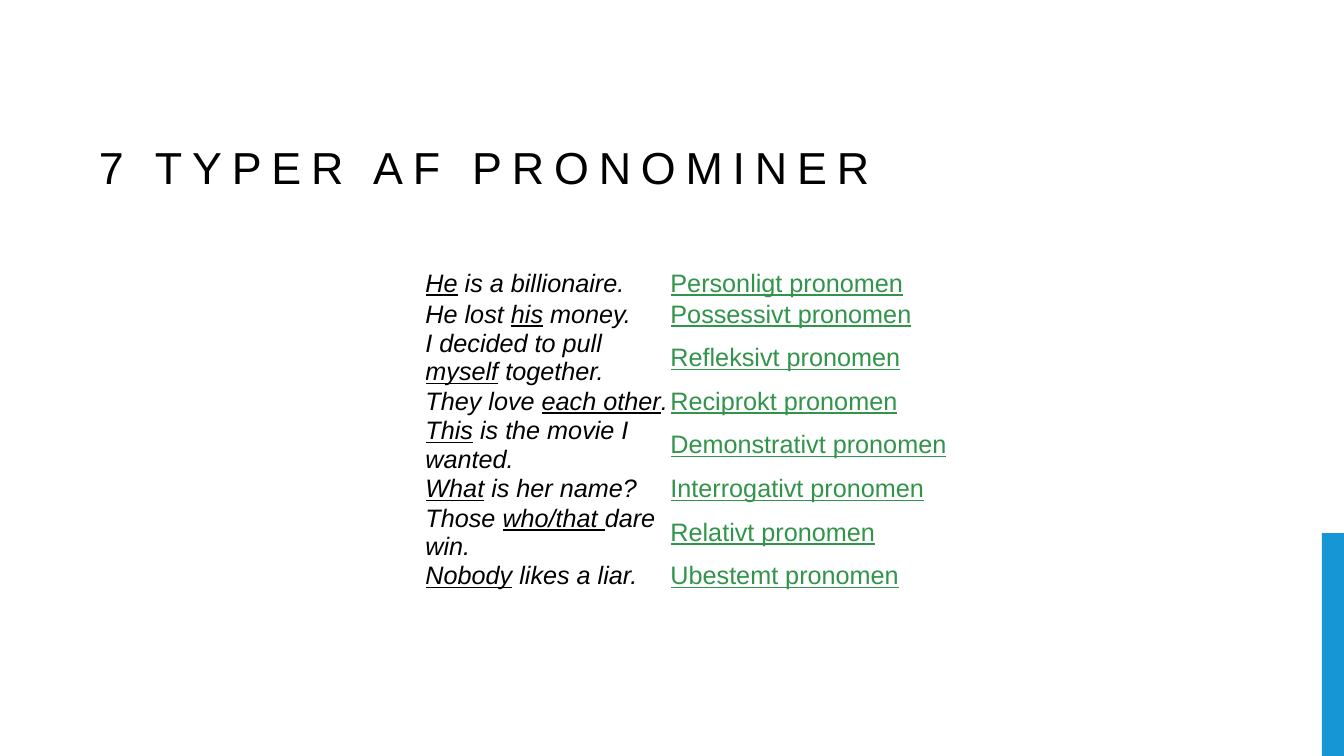
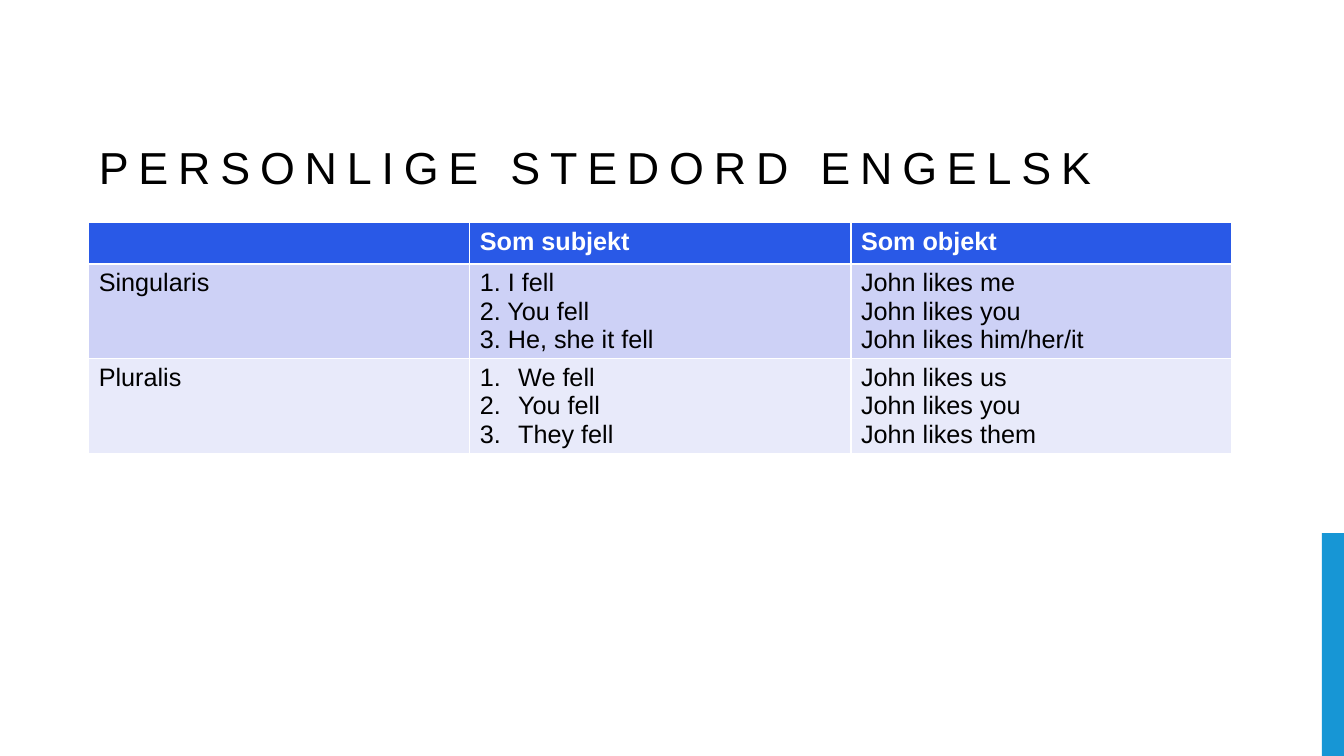
"""Build two slides on English pronouns, with Danish headings."""
import lxml.etree
import pptx
import pptx.dml.color
import pptx.enum.shapes
import pptx.enum.text
import pptx.oxml.ns
import pptx.util

Inches = pptx.util.Inches
RGBColor = pptx.dml.color.RGBColor
Anchor = pptx.enum.text.MSO_ANCHOR

BLACK = RGBColor(0x00, 0x00, 0x00)
WHITE = RGBColor(0xFF, 0xFF, 0xFF)
GREEN = RGBColor(0x31, 0x94, 0x4A)
BAND_BLUE = RGBColor(0x17, 0x96, 0xD5)
HEADER_BLUE = RGBColor(0x29, 0x59, 0xE7)
ROW_DARK = RGBColor(0xCD, 0xD1, 0xF6)
ROW_LIGHT = RGBColor(0xE8, 0xEA, 0xFA)

LINE_HEIGHT = 0.28

PRONOUN_TYPES = [
    (("", "He", " is a billionaire."), "Personligt pronomen", 1),
    (("He lost ", "his", " money."), "Possessivt pronomen", 1),
    (("I decided to pull ", "myself", " together."), "Refleksivt pronomen", 2),
    (("They love ", "each other", "."), "Reciprokt pronomen", 1),
    (("", "This", " is the movie I wanted."), "Demonstrativt pronomen", 2),
    (("", "What", " is her name?"), "Interrogativt pronomen", 1),
    (("Those ", "who/that ", "dare win."), "Relativt pronomen", 2),
    (("", "Nobody", " likes a liar."), "Ubestemt pronomen", 1),
]

PERSONAL_PRONOUNS = [
    ([], ["Som subjekt"], ["Som objekt"]),
    (["Singularis"], ["1. I fell", "2. You fell", "3. He, she it fell"],
     ["John likes me", "John likes you", "John likes him/her/it"]),
    (["Pluralis"], ["We fell", "You fell", "They fell"],
     ["John likes us", "John likes you", "John likes them"]),
]


class Deck:
    """Hold the shared style and the current slide."""

    font_name = "Arial"
    body_size = 18
    title_size = 32

    def __init__(self):
        self.presentation = pptx.Presentation()
        self.presentation.slide_width = Inches(13.33)
        self.presentation.slide_height = Inches(7.5)
        self.slide = None

    def add_slide(self, title):
        """Start a slide with its title and corner band."""
        self.slide = self.presentation.slides.add_slide(self.presentation.slide_layouts[5])
        self.add_band()
        self.set_title(title)

    def add_band(self):
        """Add the blue band at the lower right edge."""
        band = self.slide.shapes.add_shape(
            pptx.enum.shapes.MSO_SHAPE.RECTANGLE,
            Inches(13.11), Inches(5.29), Inches(0.22), Inches(2.21))
        band.shadow.inherit = False
        band.fill.solid()
        band.fill.fore_color.rgb = BAND_BLUE
        band.line.fill.background()

    def set_title(self, text):
        """Place and fill the title placeholder."""
        title = self.slide.shapes.title
        title.left, title.top = Inches(0.88), Inches(0.4)
        title.width, title.height = Inches(11.33), Inches(1.57)
        frame = title.text_frame
        frame.word_wrap = True
        frame.auto_size = pptx.enum.text.MSO_AUTO_SIZE.NONE
        frame.vertical_anchor = Anchor.BOTTOM
        paragraph = frame.paragraphs[0]
        paragraph.alignment = pptx.enum.text.PP_ALIGN.LEFT
        paragraph.line_spacing = 1.2
        run = self.add_run(paragraph, text, size=self.title_size)
        run.font._element.set("spc", "700")

    def add_run(self, paragraph, text, color=BLACK, size=body_size,
                bold=False, italic=False, underline=False):
        """Append one formatted run."""
        run = paragraph.add_run()
        run.text = text
        font = run.font
        font.name, font.size = self.font_name, pptx.util.Pt(size)
        font.bold, font.italic, font.underline = bold, italic, underline
        font.color.rgb = color
        return run

    def add_table(self, left, top, widths, heights):
        """Add a table with the given column widths and row heights."""
        frame = self.slide.shapes.add_table(
            len(heights), len(widths), Inches(left), Inches(top),
            Inches(sum(widths)), Inches(sum(heights)))
        table = frame.table
        for column, width in zip(table.columns, widths):
            column.width = Inches(width)
        for row, height in zip(table.rows, heights):
            row.height = Inches(height)
        return table

    def clear_cell(self, cell):
        """Remove the fill and margins of a cell."""
        cell.fill.background()
        cell.margin_left = cell.margin_right = cell.margin_top = cell.margin_bottom = 0
        cell.vertical_anchor = Anchor.MIDDLE

    def fill_cell(self, cell, lines, fill, color=BLACK, bold=False, numbered=False):
        """Colour a cell and write one paragraph per line."""
        cell.fill.solid()
        cell.fill.fore_color.rgb = fill
        frame = cell.text_frame
        for index, line in enumerate(lines):
            paragraph = frame.add_paragraph() if index else frame.paragraphs[0]
            if numbered:
                self.number_paragraph(paragraph)
            self.add_run(paragraph, line, color, bold=bold)

    def number_paragraph(self, paragraph):
        """Give a paragraph an automatic number and hanging indent."""
        properties = paragraph._p.get_or_add_pPr()
        indent = Inches(0.38)
        properties.set("marL", str(indent))
        properties.set("indent", str(-indent))
        lxml.etree.SubElement(
            properties, pptx.oxml.ns.qn("a:buAutoNum"), type="arabicPeriod")

    def add_pronoun_types(self):
        """Add the example sentences and their pronoun types."""
        heights = [LINE_HEIGHT * lines for _, _, lines in PRONOUN_TYPES]
        table = self.add_table(2.95, 2.66, [1.27, 2.43, 3.49], heights)
        table.first_row = table.horz_banding = False
        for cell in table.iter_cells():
            self.clear_cell(cell)
        for row, (sentence, name, _) in enumerate(PRONOUN_TYPES):
            paragraph = table.cell(row, 1).text_frame.paragraphs[0]
            for position, text in enumerate(sentence):
                if text:
                    self.add_run(paragraph, text, italic=True, underline=position == 1)
            self.add_run(table.cell(row, 2).text_frame.paragraphs[0],
                         name, GREEN, underline=True)

    def add_personal_pronouns(self):
        """Add the table of subject and object forms."""
        table = self.add_table(0.88, 2.21, [3.78] * 3, [0.41, 0.93, 0.93])
        fills = [HEADER_BLUE, ROW_DARK, ROW_LIGHT]
        for row, (cells, fill) in enumerate(zip(PERSONAL_PRONOUNS, fills)):
            header = row == 0
            for column, lines in enumerate(cells):
                self.fill_cell(table.cell(row, column), lines, fill,
                               WHITE if header else BLACK, bold=header,
                               numbered=(row, column) == (2, 1))


def main():
    """Build and save the presentation."""
    deck = Deck()
    deck.add_slide("7 TYPER AF PRONOMINER")
    deck.add_pronoun_types()
    deck.add_slide("PERSONLIGE STEDORD ENGELSK")
    deck.add_personal_pronouns()
    deck.presentation.save("out.pptx")


if __name__ == "__main__":
    main()
